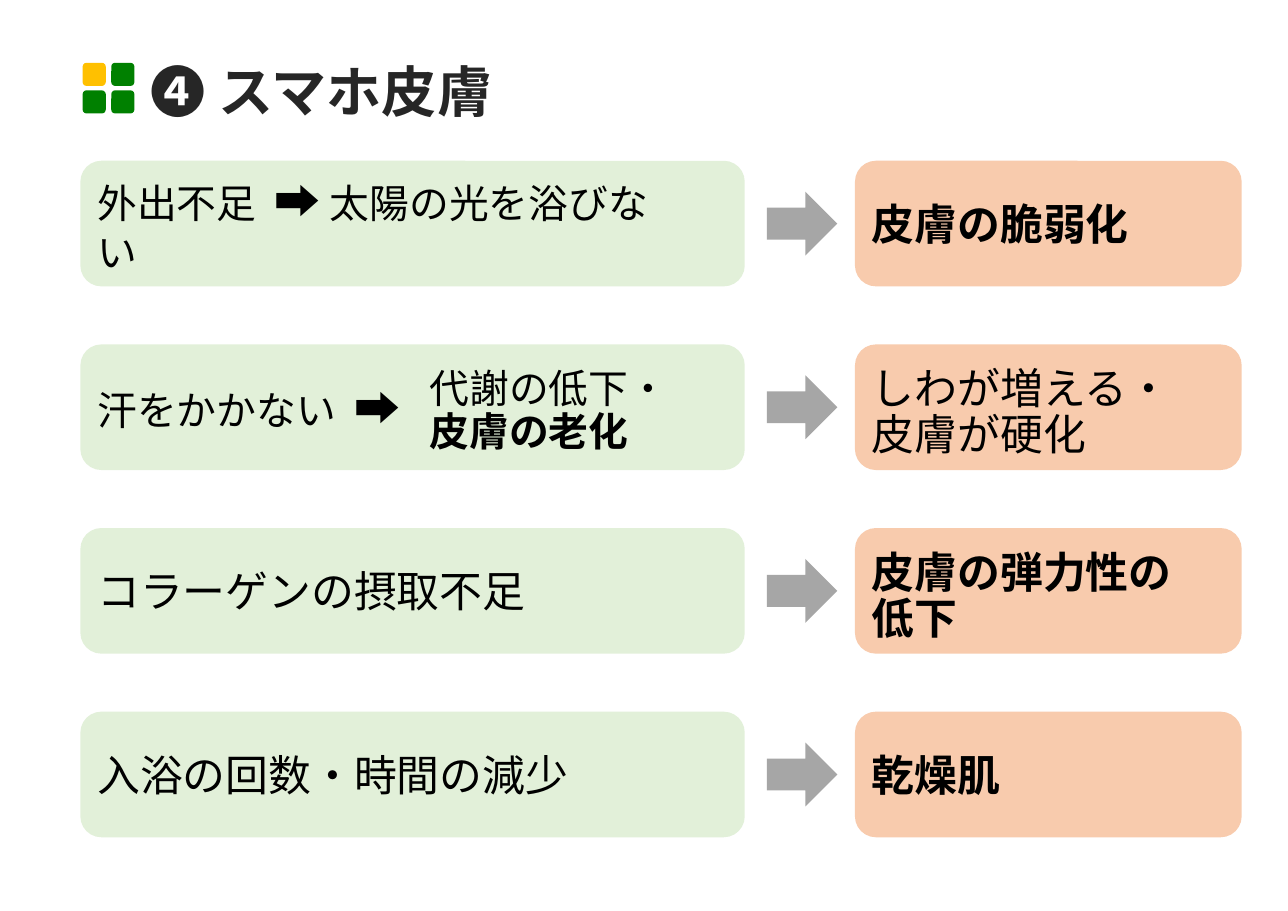
import pptx
import pptx.dml.color
import pptx.enum.shapes
import pptx.enum.text
import pptx.oxml
import pptx.oxml.ns
import pptx.util
from pptx.util import Inches

RGBColor = pptx.dml.color.RGBColor
MSO_SHAPE = pptx.enum.shapes.MSO_SHAPE
ANCHOR = pptx.enum.text.MSO_ANCHOR

FONT = "Noto Sans CJK JP"
BLACK = RGBColor(0x00, 0x00, 0x00)
TITLE_GREY = RGBColor(0x26, 0x26, 0x26)
YELLOW = RGBColor(0xFF, 0xC0, 0x00)
GREEN = RGBColor(0x00, 0x80, 0x00)
CAUSE_GREEN = RGBColor(0xE2, 0xF0, 0xD9)
EFFECT_ORANGE = RGBColor(0xF8, 0xCB, 0xAD)
ARROW_GREY = RGBColor(0xA6, 0xA6, 0xA6)

ROW_TOP, ROW_STEP, ROW_HEIGHT = 1.46, 1.667, 1.14
CAUSE_LEFT, CAUSE_WIDTH = 0.73, 6.03
EFFECT_LEFT, EFFECT_WIDTH = 7.76, 3.51

# Each run is (text, size) or (text, size, extra letter spacing in points).
CAUSES = [
    [("外出不足", 26), (" ", 26, 6), ("➡", 30), (" 太陽の光を浴びない", 26)],
    [("汗をかかない", 26), (" ", 26, 6), ("➡", 30)],
    [("コラーゲンの摂取不足", 28)],
    [("入浴の回数・時間の減少", 28)],
]
EFFECTS = [
    (["皮膚の脆弱化"], True),
    (["しわが増える・", "皮膚が硬化"], False),
    (["皮膚の弾力性の", "低下"], True),
    (["乾燥肌"], True),
]


def add_run(paragraph, text, size, spacing=0, bold=False, color=BLACK):
    run = paragraph.add_run()
    run.text = text
    run.font.size = pptx.util.Pt(size)
    run.font.bold = bold
    run.font.color.rgb = color
    run.font.name = FONT
    properties = run.font._element
    east_asian = pptx.oxml.parse_xml(
        f'<a:ea {pptx.oxml.ns.nsdecls("a")} typeface="{FONT}"/>')
    properties.find(pptx.oxml.ns.qn("a:latin")).addnext(east_asian)
    if spacing:
        properties.set("spc", str(spacing * 100))


def write_paragraphs(shape, paragraphs, anchor=ANCHOR.MIDDLE, line_points=None,
                     space_after=0, top_inset=0.05, right_inset=0.1, **run_format):
    """Fill a shape with paragraphs, each given as a list of runs."""
    frame = shape.text_frame
    frame.word_wrap = True
    frame.vertical_anchor = anchor
    frame.margin_top = Inches(top_inset)
    frame.margin_right = Inches(right_inset)
    for index, runs in enumerate(paragraphs):
        paragraph = frame.add_paragraph() if index else frame.paragraphs[0]
        paragraph.alignment = pptx.enum.text.PP_ALIGN.LEFT
        paragraph.space_after = pptx.util.Pt(space_after)
        if line_points:
            paragraph.line_spacing = pptx.util.Pt(line_points)
        for run in runs:
            add_run(paragraph, *run, **run_format)


def add_block(shapes, kind, left, top, width, height, color):
    block = shapes.add_shape(
        kind, Inches(left), Inches(top), Inches(width), Inches(height))
    block.shadow.inherit = False
    block.fill.solid()
    block.fill.fore_color.rgb = color
    block.line.fill.background()
    return block


def add_text_box(shapes, left, top, width, height):
    return shapes.add_textbox(
        Inches(left), Inches(top), Inches(width), Inches(height))


def add_title(shapes):
    for index, color in enumerate([YELLOW, GREEN, GREEN, GREEN]):
        row, column = divmod(index, 2)
        add_block(shapes, MSO_SHAPE.ROUNDED_RECTANGLE, 0.75 + 0.26 * column,
                  0.57 + 0.25 * row, 0.21, 0.21, color)
    title = add_text_box(shapes, 1.27, 0.48, 9.92, 0.68)
    write_paragraphs(title, [[("➍ スマホ皮膚", 36)]], bold=True, color=TITLE_GREY)


def add_cause(shapes, top, runs):
    cause = add_block(shapes, MSO_SHAPE.ROUNDED_RECTANGLE, CAUSE_LEFT, top,
                      CAUSE_WIDTH, ROW_HEIGHT, CAUSE_GREEN)
    write_paragraphs(cause, [runs], space_after=6, right_inset=0.6)


def add_effect(shapes, top, lines, bold):
    effect = add_block(shapes, MSO_SHAPE.ROUNDED_RECTANGLE, EFFECT_LEFT, top,
                       EFFECT_WIDTH, ROW_HEIGHT, EFFECT_ORANGE)
    paragraphs = [[(line, 28)] for line in lines]
    if len(lines) > 1:
        write_paragraphs(effect, paragraphs, line_points=30, top_inset=0.16, bold=bold)
    else:
        write_paragraphs(effect, paragraphs, space_after=6, bold=bold)


def add_metabolism_note(shapes):
    note = add_text_box(shapes, 3.8, 3.3, 2.59, 0.89)
    write_paragraphs(note, [[("代謝の低下・", 26)], [("皮膚の老化", 26, 0, True)]],
                     anchor=ANCHOR.TOP, line_points=28)


def main():
    presentation = pptx.Presentation()
    presentation.slide_width = Inches(11.69)
    presentation.slide_height = Inches(8.27)
    shapes = presentation.slides.add_slide(presentation.slide_layouts[6]).shapes

    add_title(shapes)
    for row, (cause, (effect, bold)) in enumerate(zip(CAUSES, EFFECTS)):
        top = ROW_TOP + row * ROW_STEP
        add_cause(shapes, top, cause)
        add_block(shapes, MSO_SHAPE.RIGHT_ARROW, 6.96, top + 0.28, 0.64, 0.58, ARROW_GREY)
        add_effect(shapes, top, effect, bold)
    add_metabolism_note(shapes)

    presentation.save("out.pptx")


if __name__ == "__main__":
    main()
